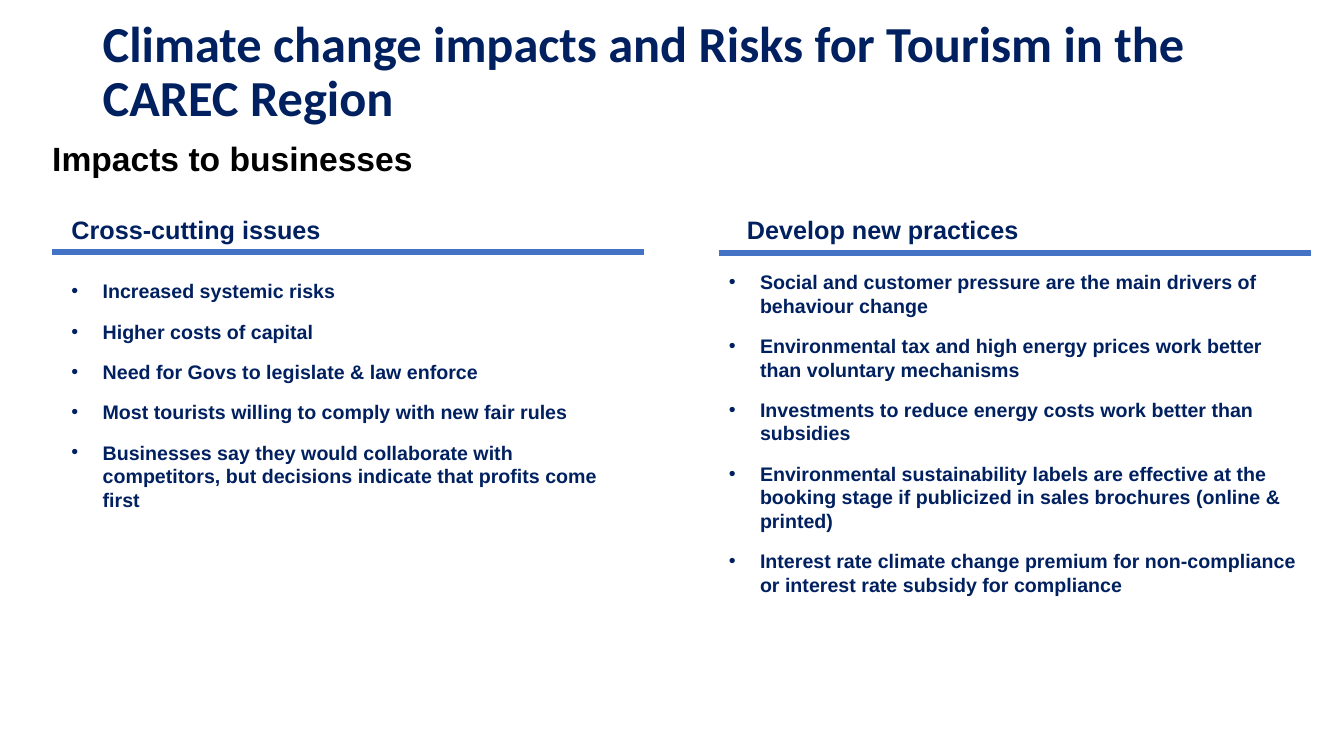
from lxml.etree import SubElement
from pptx import Presentation
from pptx.dml.color import RGBColor as Color
from pptx.enum.shapes import MSO_CONNECTOR as Link
from pptx.enum.text import MSO_ANCHOR as Anchor
from pptx.oxml.ns import qn
from pptx.util import Inches, Pt

NAVY = "002060"
BLUE = "4472C4"
BLACK = "000000"

ISSUES = [
    "Increased systemic risks",
    "Higher costs of capital",
    "Need for Govs to legislate & law enforce",
    "Most tourists willing to comply with new fair rules",
    "Businesses say they would collaborate with competitors, "
    "but decisions indicate that profits come first",
]
HABITS = [
    "Social and customer pressure are the main drivers of behaviour change",
    "Environmental tax and high energy prices work better than voluntary mechanisms",
    "Investments to reduce energy costs work better than subsidies",
    "Environmental sustainability labels are effective at the booking stage "
    "if publicized in sales brochures (online & printed)",
    "Interest rate climate change premium for non-compliance "
    "or interest rate subsidy for compliance",
]


def paint(target, tone):
    target.rgb = Color.from_string(tone)


def add_dot(para):
    """Give a paragraph a hanging bullet."""
    props = para._p.get_or_add_pPr()
    props.set("marL", str(Inches(0.31)))
    props.set("indent", str(-Inches(0.31)))
    SubElement(props, qn("a:buFont")).set("typeface", "Arial")
    SubElement(props, qn("a:buChar")).set("char", "•")


def add_text(slide, area, lines, size, tone=NAVY, face="Arial",
             after=0, lead=None, dots=False, anchor=Anchor.TOP):
    """Place a bold text box with one paragraph per line."""
    frame = slide.shapes.add_textbox(*map(Inches, area)).text_frame
    frame.word_wrap = True
    frame.vertical_anchor = anchor
    for i, line in enumerate(lines):
        para = frame.add_paragraph() if i else frame.paragraphs[0]
        para.space_after = Pt(after)
        if lead:
            para.line_spacing = lead
        if dots:
            add_dot(para)
        run = para.add_run()
        run.text = line
        run.font.name = face
        run.font.size = Pt(size)
        run.font.bold = True
        paint(run.font.color, tone)


def add_rule(slide, left, top, width):
    """Draw the thick line under a column heading."""
    ends = map(Inches, (left, top, left + width, top))
    rule = slide.shapes.add_connector(Link.STRAIGHT, *ends)
    rule.line.width = Pt(4.5)
    paint(rule.line.color, BLUE)
    SubElement(rule._element.spPr, qn("a:effectLst"))


def add_column(slide, head, head_area, rule_at, items, list_area):
    """Build a heading, its rule and the bullet list below."""
    add_text(slide, head_area, [head], 18, after=12)
    add_rule(slide, *rule_at, 5.87)
    add_text(slide, list_area, items, 14, after=12, dots=True)


def main():
    deck = Presentation()
    deck.slide_width = Inches(13.33)
    deck.slide_height = Inches(7.5)
    slide = deck.slides.add_slide(deck.slide_layouts[6])

    # Title and subtitle
    add_text(slide, (0.92, 0, 11.5, 1.45),
             ["Climate change impacts and Risks for Tourism in the CAREC Region"],
             36, face="Calibri", lead=0.9, anchor=Anchor.MIDDLE)
    add_text(slide, (0.42, 1.32, 9.74, 0.5), ["Impacts to businesses"],
             24, tone=BLACK, after=6)

    # Two columns
    add_column(slide, "Cross-cutting issues", (0.61, 2.08, 3.42, 0.4),
               (0.52, 2.5), ISSUES, (0.61, 2.72, 5.78, 2.19))
    add_column(slide, "Develop new practices", (7.31, 2.08, 4.09, 0.4),
               (7.13, 2.51), HABITS, (7.13, 2.63, 5.87, 3.77))

    deck.save("out.pptx")


if __name__ == "__main__":
    main()
